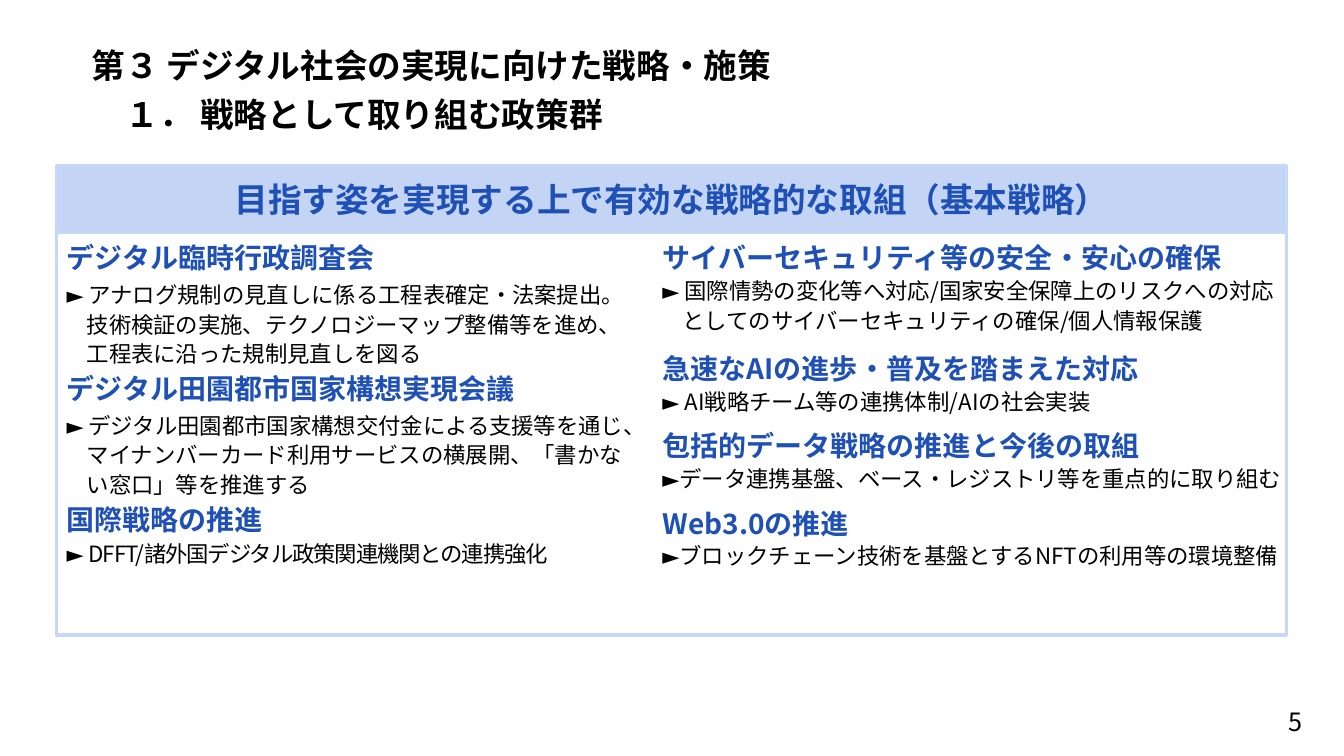
import pptx
import pptx.util
import pptx.dml.color
import pptx.enum.text
import pptx.enum.shapes
import pptx.oxml.ns
import lxml.etree

Pt = pptx.util.Pt
RGBColor = pptx.dml.color.RGBColor
Align = pptx.enum.text.PP_ALIGN
Anchor = pptx.enum.text.MSO_ANCHOR
qn = pptx.oxml.ns.qn

BLUE = RGBColor(0x1E, 0x50, 0xB5)
BLACK = RGBColor(0, 0, 0)
PALE = RGBColor(0xC3, 0xD4, 0xF5)
EDGE = RGBColor(0xC5, 0xD7, 0xFB)
FONT = "Noto Sans CJK JP"
WIDE = pptx.util.Inches(13.33)
HIGH = pptx.util.Inches(7.5)

# Each topic: heading, detail, hanging indent in inches, space after detail
LEFT = [
    ("デジタル臨時行政調査会",
     ["► アナログ規制の見直しに係る工程表確定・法案提出。技術検証の実施、"
      "テクノロジーマップ整備等を進め、工程表に沿った規制見直しを図る"], 0.2, 3),
    ("デジタル田園都市国家構想実現会議",
     ["► デジタル田園都市国家構想交付金による支援等を通じ、マイナンバーカード"
      "利用サービスの横展開、「書かない窓口」等を推進する"], 0.2, 3),
    ("国際戦略の推進",
     ["► ", "DFFT/諸外国デジタル政策関連機関との連携強化"], 0, 3),
]
RIGHT = [
    ("サイバーセキュリティ等の安全・安心の確保",
     ["► 国際情勢の変化等へ対応/国家安全保障上のリスクへの対応としての"
      "サイバーセキュリティの確保/個人情報保護"], 0.2, 3),
    ("急速なAIの進歩・普及を踏まえた対応",
     ["► AI戦略チーム等の連携体制/AIの社会実装"], 0.1, 0),
    ("包括的データ戦略の推進と今後の取組",
     ["►データ連携基盤、ベース・レジストリ等を重点的に取り組む"], 0.1, 0),
    ("Web3.0の推進",
     ["►ブロックチェーン技術を基盤とするNFTの利用等の環境整備"], 0.1, 0),
]


def area(left, top, width, height):
    """Turn percentages of the slide into lengths."""
    return [int(side * part / 100) for side, part in
            zip((WIDE, HIGH, WIDE, HIGH), (left, top, width, height))]


def move(shape, box):
    shape.left, shape.top, shape.width, shape.height = area(*box)


def style(para, size, color, bold=False, align=Align.LEFT):
    font = para.font
    font.size, font.bold, font.name = Pt(size), bold, FONT
    font.color.rgb = color
    para.alignment = align
    base = para._p.get_or_add_pPr().find(qn("a:defRPr"))
    lxml.etree.SubElement(base, qn("a:ea")).set("typeface", FONT)


def space(para, before, after, line=1.0, hang=0):
    """Set paragraph gaps and a hanging indent without a bullet."""
    para.space_before, para.space_after = Pt(before), Pt(after)
    para.line_spacing = line
    props = para._p.get_or_add_pPr()
    props.set("marL", str(pptx.util.Inches(hang)))
    props.set("indent", str(-pptx.util.Inches(hang)))
    mark = lxml.etree.Element(qn("a:buNone"))
    props.find(qn("a:defRPr")).addprevious(mark)


def add_title(slide):
    title = slide.shapes.title
    move(title, (6.08, 4.27, 87.92, 6.8))
    frame = title.text_frame
    frame.auto_size = pptx.enum.text.MSO_AUTO_SIZE.NONE
    frame.vertical_anchor = Anchor.TOP
    para = frame.paragraphs[0]
    para.text = "第３ デジタル社会の実現に向けた戦略・施策\v　１． 戦略として取り組む政策群"
    para.line_spacing = 1.2
    style(para, 24, BLACK, True)


def add_box(slide, box, fill=None, text=""):
    shape = slide.shapes.add_shape(
        pptx.enum.shapes.MSO_SHAPE.RECTANGLE, *area(*box))
    shape.shadow.inherit = False
    shape.line.color.rgb, shape.line.width = EDGE, Pt(2.25)
    if fill is None:
        shape.fill.background()
    else:
        shape.fill.solid()
        shape.fill.fore_color.rgb = fill
    if text:
        shape.text_frame.vertical_anchor = Anchor.MIDDLE
        para = shape.text_frame.paragraphs[0]
        para.text = text
        style(para, 24, BLUE, True, Align.CENTER)


def add_list(holder, box, topics, gap, after):
    """Fill a body with topics; gap goes above, after goes below a heading."""
    move(holder, box)
    frame = holder.text_frame
    frame.auto_size = pptx.enum.text.MSO_AUTO_SIZE.NONE
    frame.vertical_anchor = Anchor.TOP
    for rank, (head, parts, hang, below) in enumerate(topics):
        para = frame.add_paragraph() if rank else frame.paragraphs[0]
        para.text = head
        style(para, 20, BLUE, True)
        space(para, gap if rank else 0, after)
        para = frame.add_paragraph()
        for part in parts:
            run = para.add_run()
            run.text = part
        if len(parts) > 1:
            run._r.get_or_add_rPr().set("spc", "-80")
        style(para, 16, BLACK)
        space(para, 0, below, 1.1 if hang else 1.0, hang)


def add_page(slide):
    page = slide.shapes.add_textbox(*area(86.95, 92.8, 10.73, 5.33))
    page.text_frame.word_wrap = True
    page.text_frame.vertical_anchor = Anchor.MIDDLE
    para = page.text_frame.paragraphs[0]
    para.text = "5"
    style(para, 18, BLACK, align=Align.RIGHT)


def main():
    deck = pptx.Presentation()
    deck.slide_width, deck.slide_height = WIDE, HIGH
    slide = deck.slides.add_slide(deck.slide_layouts.get_by_name("Two Content"))
    add_title(slide)
    add_page(slide)
    add_box(slide, (4.2, 29.73, 91.52, 54.27))
    add_box(slide, (4.2, 21.87, 91.52, 8.93), PALE,
            "目指す姿を実現する上で有効な戦略的な取組（基本戦略）")
    add_list(slide.placeholders[1], (4.2, 31.2, 43.44, 54.27), LEFT, 0, 3)
    add_list(slide.placeholders[2], (48.54, 31.2, 48.16, 49.33), RIGHT, 10, 0)
    deck.save("out.pptx")


if __name__ == "__main__":
    main()
